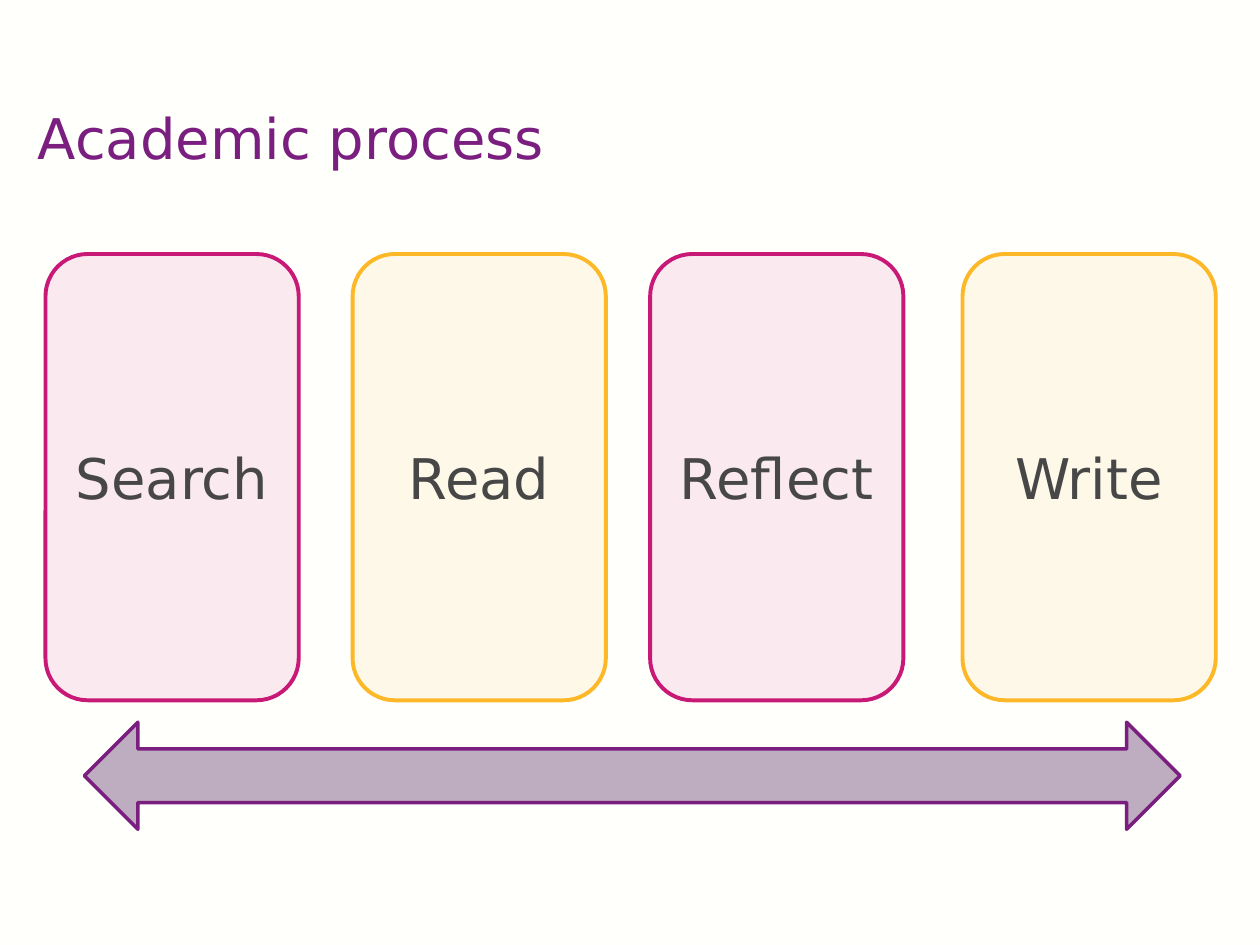
from lxml.etree import SubElement
from pptx import Presentation
from pptx.dml.color import RGBColor
from pptx.enum.shapes import MSO_SHAPE
from pptx.enum.text import MSO_ANCHOR, PP_ALIGN
from pptx.oxml.ns import qn
from pptx.util import Pt

TITLE = "Academic process"
PINK, YELLOW, PURPLE = "C81976", "FDB828", "7A1F7F"
STEPS = [("Search", 26, PINK), ("Read", 201.5, YELLOW),
         ("Reflect", 371.5, PINK), ("Write", 550, YELLOW)]
CARD_TOP, CARD_WIDTH, CARD_HEIGHT = 145.2, 144.7, 255


def rgb(value):
    """Turn a hex string into a colour."""
    return RGBColor.from_string(value)


def write(s, text, color, align=PP_ALIGN.LEFT, anchor=MSO_ANCHOR.TOP,
          insets=(3.6, 3.6, 3.6, 3.6)):
    """Put one formatted line of text into a shape."""
    tf = s.text_frame
    tf.word_wrap = True
    tf.vertical_anchor = anchor
    tf.margin_left, tf.margin_top, tf.margin_right, tf.margin_bottom = map(Pt, insets)
    p = tf.paragraphs[0]
    p.alignment = align
    p.space_before = Pt(0)
    r = p.add_run()
    r.text = text
    r.font.name = "DejaVu Sans"
    r.font.size = Pt(32)
    r.font.color.rgb = rgb(color)


def add_shape(slide, kind, box, fill, line, width, opacity=100):
    """Add a preset shape with an outline and a fill of the given opacity."""
    s = slide.shapes.add_shape(kind, *map(Pt, box))
    s.shadow.inherit = False
    s.fill.solid()
    s.fill.fore_color.rgb = rgb(fill)
    if opacity < 100:
        color = s.fill._xPr.find(qn("a:solidFill"))[0]
        SubElement(color, qn("a:alpha")).set("val", str(opacity * 1000))
    s.line.color.rgb = rgb(line)
    s.line.width = Pt(width)
    return s


def main():
    """Build and save the slide."""
    prs = Presentation()
    prs.slide_width, prs.slide_height = Pt(720), Pt(540)
    slide = prs.slides.add_slide(prs.slide_layouts[5])
    slide.background.fill.solid()
    slide.background.fill.fore_color.rgb = rgb("FFFFFC")

    title = slide.shapes.title
    title.left, title.top, title.width, title.height = map(Pt, (14.4, 15, 590, 82))
    write(title, TITLE, PURPLE, insets=(7.2, 44, 7.2, 0))

    for name, left, color in STEPS:
        card = add_shape(slide, MSO_SHAPE.ROUNDED_RECTANGLE,
                         (left, CARD_TOP, CARD_WIDTH, CARD_HEIGHT),
                         color, color, 2.25, opacity=9)
        write(card, name, "474747", align=PP_ALIGN.CENTER, anchor=MSO_ANCHOR.MIDDLE)

    add_shape(slide, MSO_SHAPE.LEFT_RIGHT_ARROW, (48.2, 412.7, 626.2, 61.2),
              "BEACC0", PURPLE, 2)
    prs.save("out.pptx")


if __name__ == "__main__":
    main()
